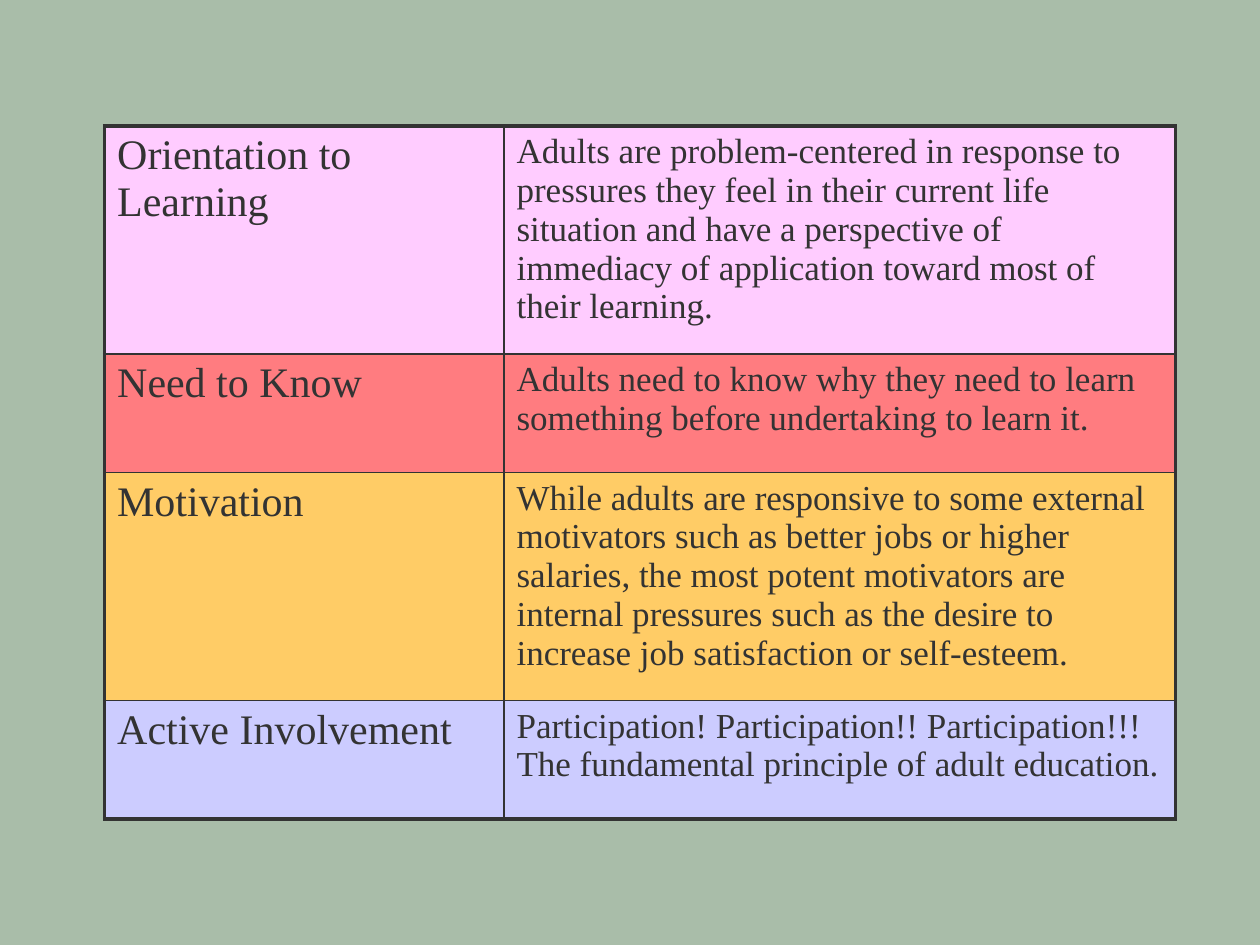
"""Build a slide with a table of adult learning principles."""
from lxml import etree
from pptx import Presentation, util as u
from pptx.dml.color import RGBColor
from pptx.oxml.ns import qn

HUES = {"back": "A9BDA9", "ink": "333333", "pink": "FFCCFF",
        "red": "FF7C80", "gold": "FFCC66", "blue": "CCCCFF"}
ROWS = [
    ("pink", 1.81, "Orientation to Learning",
     "Adults are problem-centered in response to pressures they feel in their "
     "current life situation and have a perspective of immediacy of application "
     "toward most of their learning."),
    ("red", 0.94, "Need to Know",
     "Adults need to know why they need to learn something before undertaking "
     "to learn it."),
    ("gold", 1.81, "Motivation",
     "While adults are responsive to some external motivators such as better "
     "jobs or higher salaries, the most potent motivators are internal pressures "
     "such as the desire to increase job satisfaction or self-esteem."),
    ("blue", 0.94, "Active Involvement",
     "Participation! Participation!! Participation!!! The fundamental principle "
     "of adult education."),
]
COLS = [(3.17, 24), (5.33, 20)]
LEFT, TOP = 0.83, 1
THICK, THIN = 2.25, 1
FONT = "Times New Roman"


def color(name):
    return RGBColor.from_string(HUES[name])


def edge(cell, side, size):
    line = etree.SubElement(cell._tc.get_or_add_tcPr(), qn(f"a:ln{side}"),
                            w=str(u.Pt(size)))
    fill = etree.SubElement(line, qn("a:solidFill"))
    etree.SubElement(fill, qn("a:srgbClr"), val=HUES["ink"])


def style(cell, words, size, hue, outer):
    for side, out in outer.items():
        edge(cell, side, THICK if out else THIN)
    cell.fill.solid()
    cell.fill.fore_color.rgb = color(hue)
    cell.text = words
    font = cell.text_frame.paragraphs[0].font
    font.name, font.size = FONT, u.Pt(size)
    font.color.rgb = color("ink")


def main():
    deck = Presentation()
    deck.slide_width, deck.slide_height = u.Inches(10), u.Inches(7.5)
    slide = deck.slides.add_slide(deck.slide_layouts[6])
    slide.background.fill.solid()
    slide.background.fill.fore_color.rgb = color("back")

    wide = sum(width for width, _ in COLS)
    high = sum(row[1] for row in ROWS)
    table = slide.shapes.add_table(
        len(ROWS), len(COLS), u.Inches(LEFT), u.Inches(TOP),
        u.Inches(wide), u.Inches(high)).table
    table.first_row = table.horz_banding = False
    for col, (width, _) in zip(table.columns, COLS):
        col.width = u.Inches(width)
    for r, (hue, height, *texts) in enumerate(ROWS):
        table.rows[r].height = u.Inches(height)
        for c, (words, (_, size)) in enumerate(zip(texts, COLS)):
            outer = {"L": c == 0, "R": c == len(COLS) - 1,
                     "T": r == 0, "B": r == len(ROWS) - 1}
            style(table.cell(r, c), words, size, hue, outer)
    deck.save("out.pptx")


if __name__ == "__main__":
    main()
